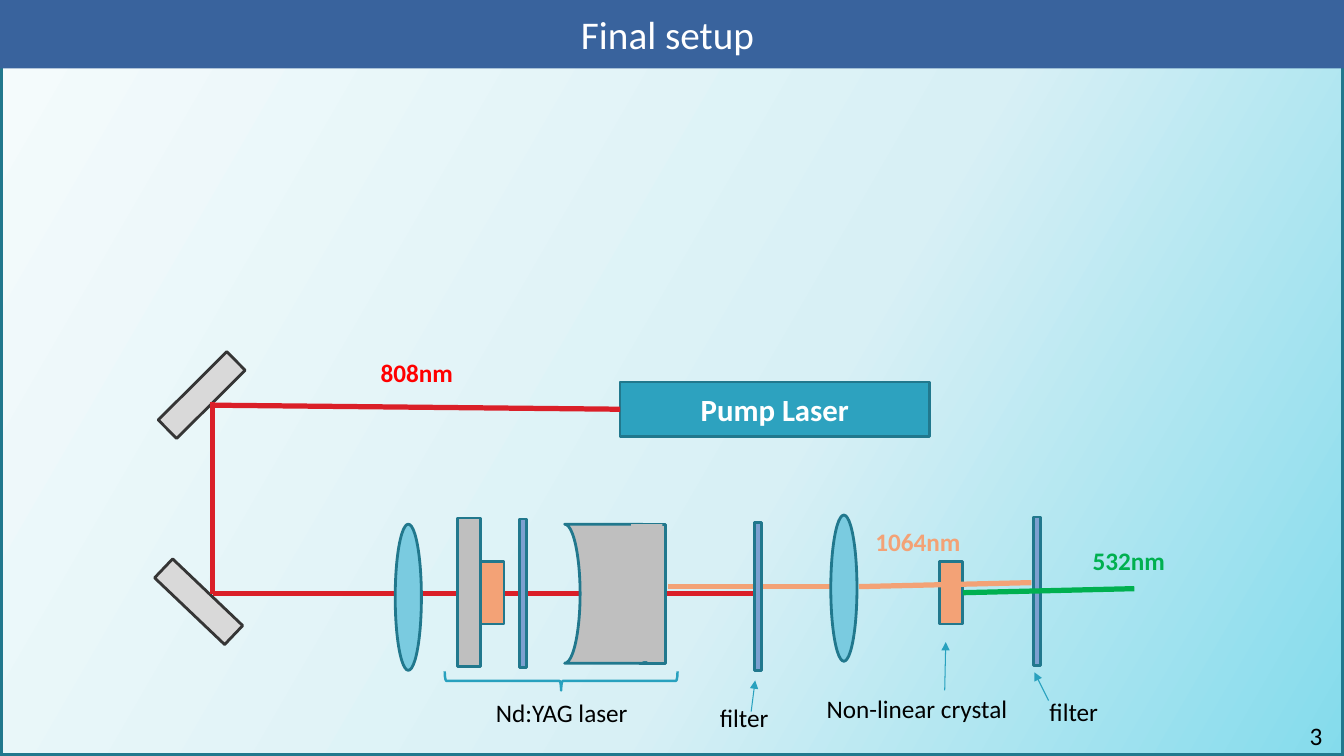
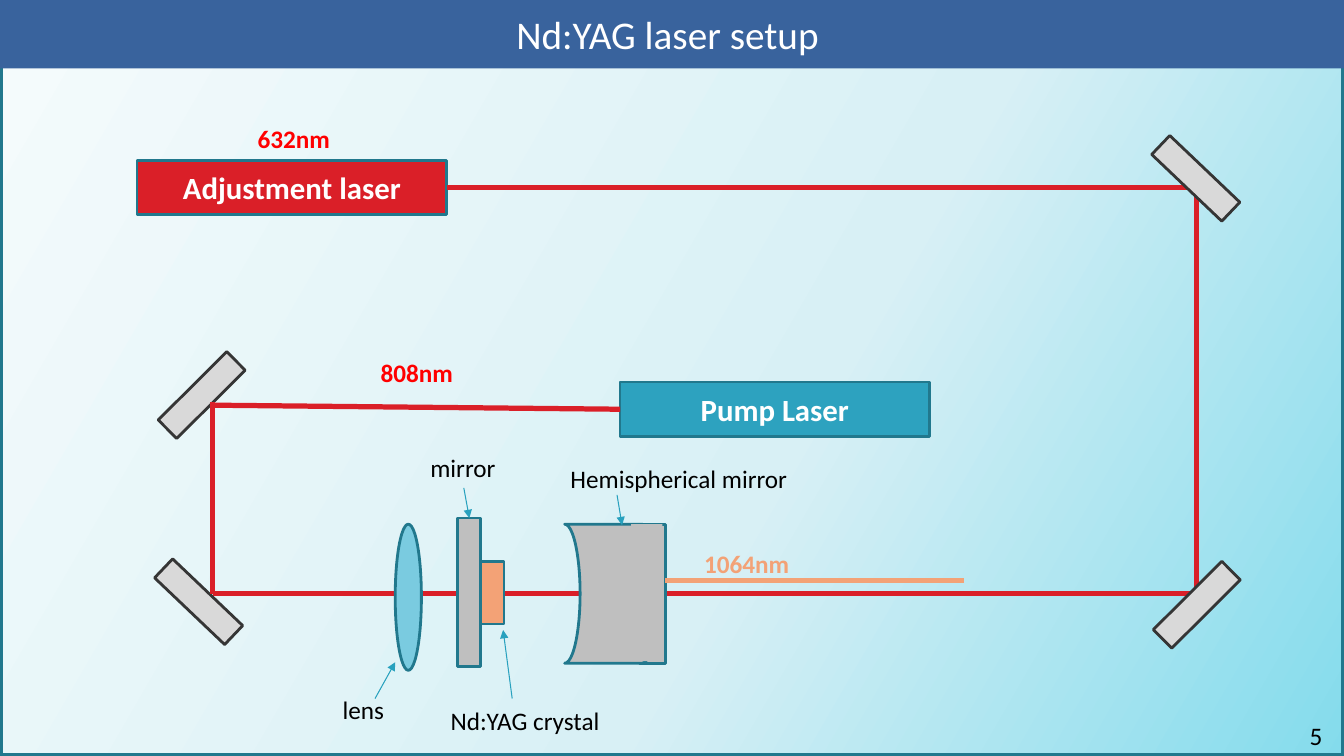
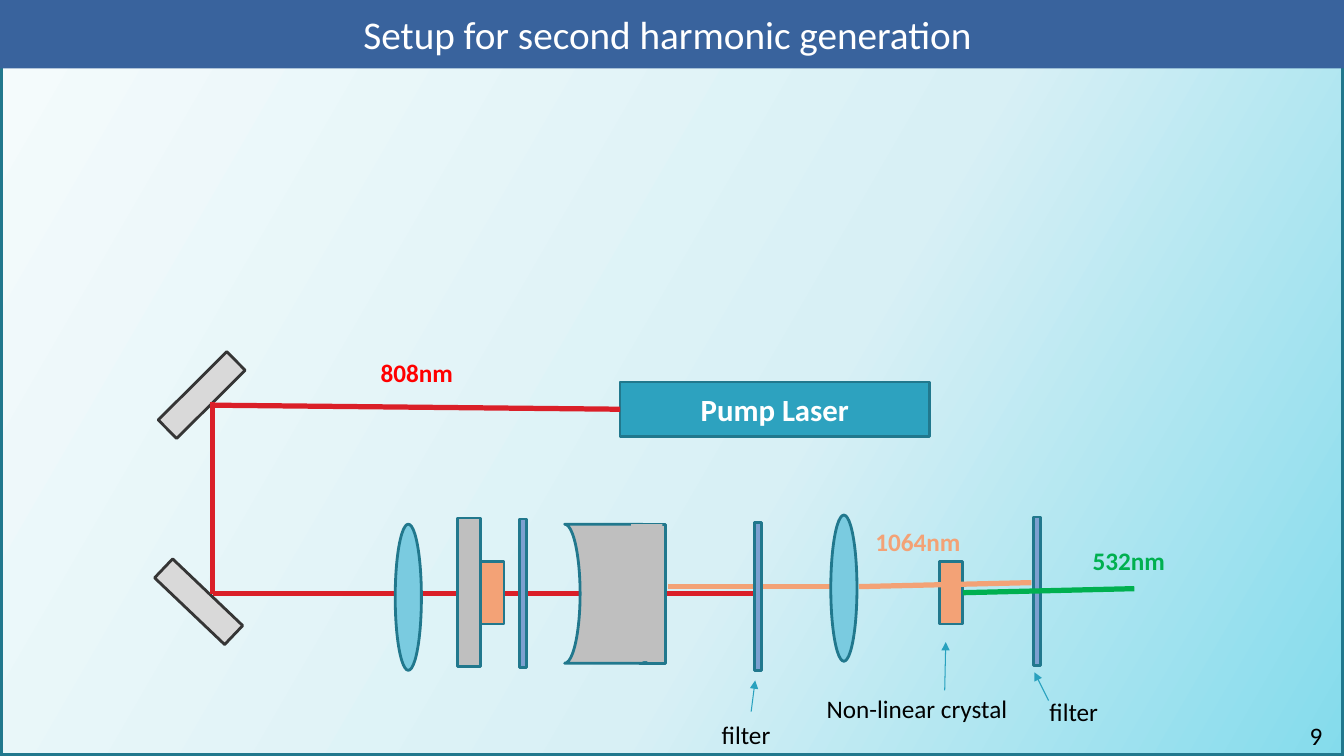
"""Three slides of laser setups, assembled from shared optical parts."""
from copy import deepcopy

from pptx import Presentation
from pptx.dml.color import RGBColor
from pptx.enum.shapes import MSO_CONNECTOR, MSO_SHAPE as Preset
from pptx.enum.text import MSO_ANCHOR, MSO_AUTO_SIZE, PP_ALIGN
from pptx.oxml.ns import qn
from pptx.util import Inches, Pt

WIDTH, HEIGHT, BAND = 13.33, 7.5, 0.68
FONT = "Calibri"
TOP, LEFT, BOTTOM, RIGHT = range(4)
COLORS = {
    "band": "39639D", "edge": "21788D", "pointer": "28A1BE",
    "pump": "2DA2BF", "red": "DA1F28", "bright red": "FF0000",
    "orange": "F3A276", "green": "00B050", "lens": "7ACBE0",
    "filter": "7DA0D0", "metal": "BFBFBF", "mirror": "D9D9D9",
    "mirror edge": "353535", "black": "000000", "white": "FFFFFF",
    "sky light": "F4FBFC", "sky mid": "D8F0F5", "sky deep": "84DBEC",
}
BACKDROP = [(0.02, "sky light"), (0.59, "sky mid"), (1, "sky deep")]

OPTICS = {
    "pump laser": (Preset.RECTANGLE, 3.07, 0.54, "pump", "edge", 0),
    "adjustment laser": (Preset.RECTANGLE, 3.07, 0.54, "red", "edge", 0),
    "falling mirror": (Preset.RECTANGLE, 0.96, 0.26, "mirror", "mirror edge", 43.6),
    "rising mirror": (Preset.RECTANGLE, 0.96, 0.26, "mirror", "mirror edge", 135.1),
    "lens": (Preset.OVAL, 0.26, 1.45, "lens", "edge", 0),
    "flat mirror": (Preset.RECTANGLE, 0.23, 1.47, "metal", "edge", 0),
    "crystal": (Preset.RECTANGLE, 0.23, 0.62, "orange", "edge", 0),
    "filter": (Preset.RECTANGLE, 0.07, 1.47, "filter", "edge", 0),
    "brace": (Preset.RIGHT_BRACE, 0.19, 2.31, None, "pointer", 90),
}
HEMISPHERE = [
    (Preset.RECTANGLE, 6.34, 5.2, 0.26, 1.38, "edge"),
    (Preset.FLOWCHART_STORED_DATA, 5.6, 5.2, 0.92, 1.38, "edge"),
    (Preset.RECTANGLE, 6.26, 5.2, 0.31, 1.36, None),
]

PUMP_LASER = ("optic", "pump laser", 6.15, 3.79, "Pump Laser")
PUMP_ARM = [
    ("optic", "falling mirror", 1.49, 5.84),
    ("optic", "rising mirror", 1.52, 3.79),
    ("beam", "red", (2.11, 5.89), (2.11, 3.99)),
    ("beam", "red", (2.11, 4.02), ("pump laser", LEFT)),
    ("label", "808nm", 3.67, 3.5, 0.93, "bright red"),
]
CAVITY = [
    ("optic", "lens", 3.92, 5.2),
    ("optic", "flat mirror", 4.54, 5.14),
    ("optic", "crystal", 4.77, 5.57),
    ("hemisphere",),
]
HARMONIC = [
    PUMP_LASER,
    ("beam", "red", (2.11, 5.89), (7.47, 5.89)),
    *PUMP_ARM, *CAVITY,
    ("beam", "orange", (6.63, 5.82), (8.37, 5.82)),
    ("optic", "filter", 5.15, 5.15),
    ("optic", "filter", 7.48, 5.18),
    ("optic", "lens", 8.24, 5.11),
    ("optic", "crystal", 9.32, 5.57),
    ("beam", "orange", (8.52, 5.82), (10.23, 5.78)),
    ("optic", "filter", 10.25, 5.13),
    ("beam", "green", ("crystal", RIGHT), (11.25, 5.84)),
    ("label", "1064nm", 8.58, 5.17, 1.05, "orange"),
    ("label", "532nm", 10.73, 5.36, 0.93, "green"),
    ("pointer", (7.45, 7.06), (7.49, 6.75)),
    ("pointer", (9.37, 6.85), (9.38, 6.37)),
    ("pointer", (10.4, 6.95), (10.26, 6.67)),
    ("label", "filter", 10.31, 6.86, 0.69),
    ("label", "Non-linear crystal", 8.1, 6.83, 2.01),
]
ADJUSTMENT = [
    PUMP_LASER,
    ("optic", "adjustment laser", 1.36, 1.59, "Adjustment laser"),
    ("beam", "red", ("adjustment laser", RIGHT), (11.77, 1.86)),
    ("beam", "red", (11.87, 5.89), (11.87, 1.86)),
    ("beam", "red", (2.11, 5.89), (11.87, 5.89)),
    ("optic", "falling mirror", 11.38, 1.64),
    ("optic", "rising mirror", 11.39, 5.87),
    *PUMP_ARM, *CAVITY,
    ("beam", "orange", (6.6, 5.76), (9.56, 5.76)),
    ("label", "632nm", 2.45, 1.17, 0.93, "bright red"),
    ("label", "1064nm", 6.88, 5.39, 1.05, "orange"),
    ("label", "lens", 3.3, 6.84, 0.62),
    ("label", "Nd:YAG crystal", 4.37, 6.95, 1.69),
    ("label", "mirror", 4.17, 4.44, 0.85),
    ("label", "Hemispherical mirror", 5.56, 4.55, 2.37),
    ("pointer", (3.72, 6.93), (3.92, 6.57)),
    ("pointer", (5.08, 6.93), (4.99, 6.25)),
    ("pointer", (4.6, 4.84), ("flat mirror", TOP)),
    ("pointer", (6.12, 4.91), (6.17, 5.21)),
]
SLIDES = [
    ("Final setup", 3, HARMONIC + [
        ("label", "filter", 7.04, 6.92, 0.69),
        ("label", "Nd:YAG laser", 4.82, 6.87, 1.52),
        ("optic", "brace", 5.47, 5.6)]),
    ("Nd:YAG laser setup", 5, ADJUSTMENT),
    ("Setup for second harmonic generation", 9, HARMONIC + [
        ("label", "filter", 7.06, 7.09, 0.69)]),
]


def rgb(name):
    """Look up a named colour."""
    return RGBColor.from_string(COLORS[name])


def write(frame, text, size, color, bold=False, align=PP_ALIGN.LEFT):
    """Put one formatted run into a text frame."""
    paragraph = frame.paragraphs[0]
    paragraph.alignment = align
    run = paragraph.add_run()
    run.text = text
    run.font.name, run.font.size, run.font.bold = FONT, Pt(size), bold
    run.font.color.rgb = rgb(color)


def add_block(shapes, preset, x, y, w, h, fill, edge, weight=2, turn=0):
    """Add a flat preset shape."""
    block = shapes.add_shape(preset, *map(Inches, (x, y, w, h)))
    block.shadow.inherit = False
    block.rotation = turn
    if fill:
        block.fill.solid()
        block.fill.fore_color.rgb = rgb(fill)
    else:
        block.fill.background()
    if edge:
        block.line.color.rgb = rgb(edge)
        block.line.width = Pt(weight)
    else:
        block.line.fill.background()
    return block


def add_ray(shapes, placed, color, weight, start, end):
    """Add a straight connector between points or sides of placed optics."""
    ray = shapes.add_connector(MSO_CONNECTOR.STRAIGHT, 0, 0, 0, 0)
    spots = [(0, 0) if isinstance(spot[0], str) else map(Inches, spot)
             for spot in (start, end)]
    (ray.begin_x, ray.begin_y), (ray.end_x, ray.end_y) = spots
    for spot, join in ((start, ray.begin_connect), (end, ray.end_connect)):
        if isinstance(spot[0], str):
            join(placed[spot[0]], spot[1])
    ray.line.color.rgb = rgb(color)
    ray.line.width = Pt(weight)
    props = ray.element.spPr
    props.append(props.makeelement(qn("a:effectLst"), {}))
    return ray


def add_label(shapes, text, x, y, w, color="black"):
    """Add a one-line label, bold and centred when coloured."""
    box = shapes.add_textbox(*map(Inches, (x, y, w, 0.4)))
    box.text_frame.word_wrap = False
    box.text_frame.auto_size = MSO_AUTO_SIZE.SHAPE_TO_FIT_TEXT
    strong = color != "black"
    write(box.text_frame, text, 18, color, strong,
          PP_ALIGN.CENTER if strong else PP_ALIGN.LEFT)


def add_optic(shapes, placed, kind, x, y, caption=None):
    """Place a part from the optics table and remember it by kind."""
    preset, w, h, fill, edge, turn = OPTICS[kind]
    weight = 2 if fill else 1.75
    optic = add_block(shapes, preset, x, y, w, h, fill, edge, weight, turn)
    placed[kind] = optic
    if caption:
        optic.text_frame.vertical_anchor = MSO_ANCHOR.MIDDLE
        write(optic.text_frame, caption, 22, "white", True, PP_ALIGN.CENTER)


def add_pointer(shapes, placed, start, end):
    """Add a thin arrow towards a part."""
    pointer = add_ray(shapes, placed, "pointer", 0.75, start, end)
    line = pointer.line._get_or_add_ln()
    line.append(line.makeelement(qn("a:tailEnd"), {"type": "triangle"}))


def add_hemisphere(shapes):
    """Add the grouped hemispherical mirror."""
    group = shapes.add_group_shape()
    for preset, x, y, w, h, edge in HEMISPHERE:
        add_block(group.shapes, preset, x, y, w, h, "metal", edge, turn=180)


def draw(shapes, scene):
    """Draw the items of a scene from back to front."""
    placed = {}
    for kind, *details in scene:
        if kind == "optic":
            add_optic(shapes, placed, *details)
        elif kind == "beam":
            color, start, end = details
            add_ray(shapes, placed, color, 3.75, start, end)
        elif kind == "pointer":
            add_pointer(shapes, placed, *details)
        elif kind == "label":
            add_label(shapes, *details)
        else:
            add_hemisphere(shapes)


def dress_layout(layout, shapes):
    """Build the backdrop and title band and move them to the layout."""
    backdrop = add_block(shapes, Preset.RECTANGLE, 0, 0, WIDTH, HEIGHT,
                         "white", "edge", 3.75)
    backdrop.fill.gradient()
    backdrop.fill.gradient_angle = 330
    stops = backdrop.element.spPr.find(".//" + qn("a:gsLst"))
    stops.append(deepcopy(stops[0]))
    for stop, (position, color) in zip(backdrop.fill.gradient_stops, BACKDROP):
        stop.position = position
        stop.color.rgb = rgb(color)
    band = add_block(shapes, Preset.RECTANGLE, 0, 0, WIDTH, BAND, "band", None)
    for place, part in enumerate((backdrop, band), 2):
        layout.shapes.element.insert(place, part.element)


def main():
    """Build and save the deck."""
    deck = Presentation()
    deck.slide_width, deck.slide_height = Inches(WIDTH), Inches(HEIGHT)
    layout = deck.slide_layouts[5]
    for index, (heading, number, scene) in enumerate(SLIDES):
        slide = deck.slides.add_slide(layout)
        if index == 0:
            dress_layout(layout, slide.shapes)
        title = slide.shapes.title
        title.left, title.top = Inches(0.62), 0
        title.width, title.height = Inches(12), Inches(BAND)
        title.text_frame.vertical_anchor = MSO_ANCHOR.MIDDLE
        write(title.text_frame, heading, 28, "white", align=PP_ALIGN.CENTER)
        add_label(slide.shapes, str(number), 12.89, 7.1, 0.66)
        draw(slide.shapes, scene)
    deck.save("out.pptx")


if __name__ == "__main__":
    main()
